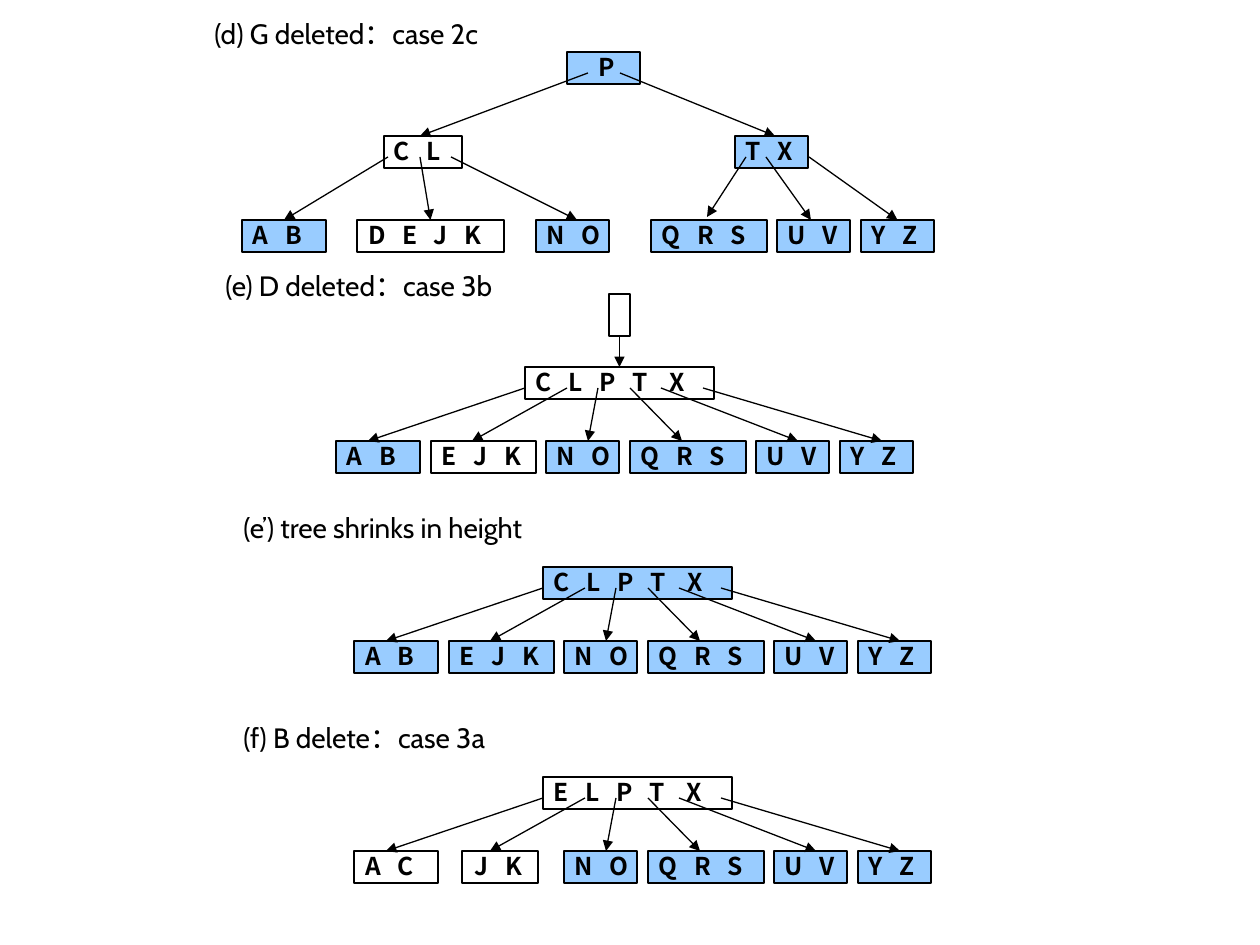
"""Build a slide showing deletions from a B-tree, one tree for each step."""
from dataclasses import dataclass
from typing import Optional

import lxml.etree
import pptx
import pptx.dml.color
import pptx.enum.shapes
import pptx.enum.text
import pptx.oxml.ns
import pptx.util

PX_PER_INCH = 126
BLACK = pptx.dml.color.RGBColor(0x00, 0x00, 0x00)
BLUE = pptx.dml.color.RGBColor(0x99, 0xCC, 0xFF)
LABEL_FONT = "Cabin"
KEY_FONT = "Noto Sans CJK TC"
NODE_HEIGHT = 32
KEY_GAP = 6.3
WIDE_GAP = 9.4
LEAF_DROP = 74
ARROW_DROP = 21
TOP, BOTTOM = 0, 2


@dataclass(frozen=True)
class Node:
    keys: str
    x: int
    width: int
    fill: Optional[pptx.dml.color.RGBColor] = BLUE
    inset: int = 11
    last_gap: float = KEY_GAP
    height: int = NODE_HEIGHT


@dataclass(frozen=True)
class Arrow:
    start: tuple[int, int]
    tip: tuple[int, int]
    target: Optional[str] = None


@dataclass(frozen=True)
class Label:
    text: str
    x: int
    y: int
    width: int


@dataclass(frozen=True)
class FlatTree:
    x: int
    y: int
    root: Node
    leaves: tuple[Node, ...]


LABELS = (
    Label("(d) G deleted：case 2c", 202, 10, 309),
    Label("(e) D deleted：case 3b", 213, 262, 311),
    Label("(e’) tree shrinks in height", 231, 504, 336),
    Label("(f) B delete：case 3a", 231, 714, 286),
)

DEEP_LEVELS = {
    52: (Node("P", 567, 73, inset=32),),
    136: (Node("C L", 384, 78, None, inset=10), Node("T X", 735, 73)),
    220: (
        Node("A B", 242, 84), Node("D E J K", 357, 147, None), Node("N O", 536, 73),
        Node("Q R S", 651, 116), Node("U V", 777, 73), Node("Y Z", 861, 73),
    ),
}
DEEP_ARROWS = (
    Arrow((588, 73), (420, 136)),
    Arrow((620, 73), (775, 136)),
    Arrow((388, 157), (284, 220), "A B"),
    Arrow((420, 157), (431, 220), "D E J K"),
    Arrow((451, 157), (577, 220)),
    Arrow((746, 157), (707, 217)),
    Arrow((766, 157), (811, 220)),
    Arrow((809, 157), (897, 220), "Y Z"),
)

SHARED_LEAVES = (Node("N O", 21, 73), Node("Q R S", 105, 116), Node("U V", 231, 73), Node("Y Z", 315, 73))
FLAT_ARROWS = ((0, -157), (42, -53), (73, 63), (105, 157), (136, 273), (178, 357))


def flat_root(keys: str, fill: Optional[pptx.dml.color.RGBColor]) -> Node:
    return Node(keys, 0, 189, fill, last_gap=WIDE_GAP)


FLAT_TREES = (
    FlatTree(525, 367, flat_root("C L P T X", None),
             (Node("A B", -189, 84), Node("E J K", -94, 105, None), *SHARED_LEAVES)),
    FlatTree(543, 567, flat_root("C L P T X", BLUE),
             (Node("A B", -189, 84), Node("E J K", -94, 105), *SHARED_LEAVES)),
    FlatTree(543, 777, flat_root("E L P T X", None),
             (Node("A C", -189, 84, None), Node("J K", -81, 76, None, inset=13), *SHARED_LEAVES)),
)
EMPTY_ROOT = Node("", 84, 21, None, height=42)
EMPTY_ROOT_RISE = 73


def px(length: int) -> pptx.util.Emu:
    return pptx.util.Emu(round(length * 914400 / PX_PER_INCH))


def write_text(frame, text: str, *, font: str, size: int, bold: bool = False,
               gaps: tuple[float, ...] = ()) -> None:
    """Write one left-aligned line, widening its spaces by the given points."""
    frame.word_wrap = True
    frame.vertical_anchor = pptx.enum.text.MSO_ANCHOR.TOP
    paragraph = frame.paragraphs[0]
    paragraph.alignment = pptx.enum.text.PP_ALIGN.LEFT
    pieces = [(text, 0)]
    if gaps:
        first, *rest = text.split(" ")
        pieces = [(first, 0)]
        for gap, word in zip(gaps, rest):
            pieces += [(" ", gap), (word, 0)]
    for piece, spacing in pieces:
        run = paragraph.add_run()
        run.text = piece
        run.font.name = font
        run.font.size = pptx.util.Pt(size)
        run.font.bold = bold
        run.font.color.rgb = BLACK
        if spacing:
            run._r.get_or_add_rPr().set("spc", str(round(spacing * 100)))


def draw_label(slide, label: Label) -> None:
    box = slide.shapes.add_textbox(px(label.x), px(label.y), px(label.width), px(47))
    write_text(box.text_frame, label.text, font=LABEL_FONT, size=16)


def draw_node(slide, node: Node, left: int, top: int):
    """Draw a node moved by left, at height top, and return its shape."""
    box = slide.shapes.add_shape(pptx.enum.shapes.MSO_SHAPE.RECTANGLE, px(left + node.x), px(top),
                                 px(node.width), px(node.height))
    box.shadow.inherit = False
    if node.fill is None:
        box.fill.background()
    else:
        box.fill.solid()
        box.fill.fore_color.rgb = node.fill
    box.line.color.rgb = BLACK
    box.line.width = pptx.util.Pt(0.75)
    if node.keys:
        frame = box.text_frame
        frame.margin_left = px(node.inset)
        frame.margin_right = frame.margin_top = frame.margin_bottom = 0
        gaps = (KEY_GAP,) * (node.keys.count(" ") - 1) + (node.last_gap,)
        write_text(frame, node.keys, font=KEY_FONT, size=14, bold=True, gaps=gaps)
    return box


def draw_arrow(slide, start: tuple[int, int], tip: tuple[int, int], source=None, target=None) -> None:
    """Draw an arrow, joined to the source's bottom and the target's top if given."""
    arrow = slide.shapes.add_connector(pptx.enum.shapes.MSO_CONNECTOR.STRAIGHT,
                                       *map(px, start), *map(px, tip))
    if source is not None:
        arrow.begin_connect(source, BOTTOM)
    if target is not None:
        arrow.end_connect(target, TOP)
    arrow.line.color.rgb = BLACK
    arrow.line.width = pptx.util.Pt(0.75)
    qn = pptx.oxml.ns.qn
    lxml.etree.SubElement(arrow.line._get_or_add_ln(), qn("a:tailEnd"), type="triangle")
    lxml.etree.SubElement(arrow._element.spPr, qn("a:effectLst"))


def draw_deep_tree(slide) -> None:
    boxes = {node.keys: draw_node(slide, node, 0, top)
             for top, level in DEEP_LEVELS.items() for node in level}
    for arrow in DEEP_ARROWS:
        draw_arrow(slide, arrow.start, arrow.tip, target=boxes.get(arrow.target))


def draw_flat_tree(slide, tree: FlatTree):
    """Draw a root over one row of leaves and return the root's shape."""
    root = draw_node(slide, tree.root, tree.x, tree.y)
    for leaf in tree.leaves:
        draw_node(slide, leaf, tree.x, tree.y + LEAF_DROP)
    for start_x, tip_x in FLAT_ARROWS:
        draw_arrow(slide, (tree.x + start_x, tree.y + ARROW_DROP), (tree.x + tip_x, tree.y + LEAF_DROP))
    return root


def main() -> None:
    deck = pptx.Presentation()
    deck.slide_width, deck.slide_height = px(1260), px(945)
    slide = deck.slides.add_slide(deck.slide_layouts[6])
    for label in LABELS:
        draw_label(slide, label)
    draw_deep_tree(slide)
    merged_root, *_ = [draw_flat_tree(slide, tree) for tree in FLAT_TREES]
    merged = FLAT_TREES[0]
    empty_root = draw_node(slide, EMPTY_ROOT, merged.x, merged.y - EMPTY_ROOT_RISE)
    draw_arrow(slide, (620, 336), (620, 367), source=empty_root, target=merged_root)
    deck.save("out.pptx")


if __name__ == "__main__":
    main()
